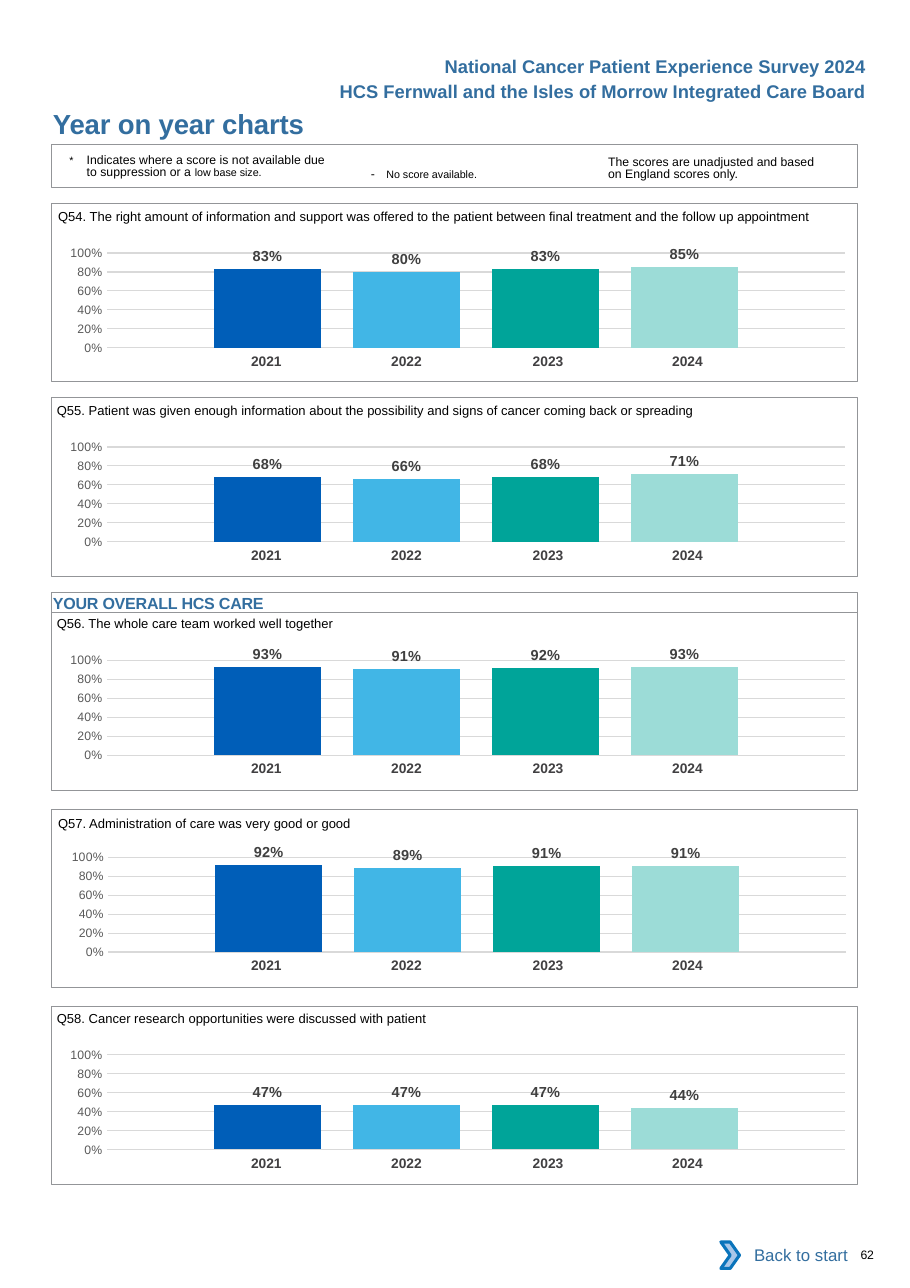
from lxml import etree
from pptx import Presentation
from pptx.chart.data import CategoryChartData
from pptx.dml.color import RGBColor
from pptx.enum import chart as ch, shapes, text
from pptx.oxml.ns import qn
from pptx.util import Cm, Pt

COLORS = {
    "blue": "336E9F", "black": "000000", "white": "FFFFFF", "frame": "939598",
    "grid": "D9D9D9", "axis": "595959", "label": "404040", "year": "414042",
    "arrow": "A8C7E9", "arrow_line": "0A74BB",
}
YEARS = {"2021": "005EB8", "2022": "41B6E6", "2023": "00A499", "2024": "9CDCD7"}
YEAR_COLUMNS = [(3.23, 0), (3.23, 0), (3.4, 0.1), (3.23, 0.3)]  # width, right margin
LEFT, WIDTH, PANEL_HEIGHT = 1.19, 18.59, 4.11
NO_STYLE = "{2D5ABB26-0587-4C30-8999-92F81FD0307C}"

# Panel top, question offset (x, y), chart offset (x, y), question, scores
PANELS = [
    (4.68, (0.15, 0.12), (-0.19, 0.68),
     "Q54. The right amount of information and support was offered to the patient "
     "between final treatment and the follow up appointment", (0.83, 0.8, 0.83, 0.85)),
    (9.17, (0.12, 0.1), (-0.19, 0.66),
     "Q55. Patient was given enough information about the possibility and signs of "
     "cancer coming back or spreading", (0.68, 0.66, 0.68, 0.71)),
    (14.12, (0.12, 0.08), (-0.19, 0.63),
     "Q56. The whole care team worked well together", (0.93, 0.91, 0.92, 0.93)),
    (18.66, (0.15, 0.14), (-0.16, 0.63),
     "Q57. Administration of care was very good or good", (0.92, 0.89, 0.91, 0.91)),
    (23.19, (0.12, 0.11), (-0.19, 0.65),
     "Q58. Cancer research opportunities were discussed with patient",
     (0.47, 0.47, 0.47, 0.44)),
]


def rgb(name):
    return RGBColor.from_string(COLORS.get(name, name))


def set_font(font, size, color, bold=False):
    font.name, font.size, font.bold = "Arial", Pt(size), bold
    font.color.rgb = rgb(color)


def write(sp, runs, size, color="black", bold=False, align="LEFT", spc=0,
          hanging=0, line=None):
    """Fill a shape with one paragraph; runs are (text, size) pairs or a string."""
    tf = sp.text_frame
    tf.word_wrap = True
    tf.margin_left = tf.margin_right = tf.margin_top = tf.margin_bottom = 0
    p = tf.paragraphs[0]
    p.alignment = getattr(text.PP_ALIGN, align)
    set_font(p.font, size, color, bold)
    if line:
        p.line_spacing = Pt(line)
    if hanging:
        pPr = p._p.get_or_add_pPr()
        pPr.set("marL", str(Cm(hanging)))
        pPr.set("indent", str(-Cm(hanging)))
    for words, run_size in [(runs, None)] if isinstance(runs, str) else runs:
        r = p.add_run()
        r.text = words
        if run_size:
            r.font.size = Pt(run_size)
        if spc:
            r.font._element.set("spc", str(spc))


def add_text(s, x, y, w, h, runs, size, **style):
    sp = s.shapes.add_textbox(Cm(x), Cm(y), Cm(w), Cm(h))
    write(sp, runs, size, **style)


def add_box(s, x, y, w, h, kind="RECTANGLE", fill=None, line=None, weight=0.5):
    sp = s.shapes.add_shape(getattr(shapes.MSO_SHAPE, kind), Cm(x), Cm(y), Cm(w), Cm(h))
    sp.shadow.inherit = False
    if fill:
        sp.fill.solid()
        sp.fill.fore_color.rgb = rgb(fill)
    else:
        sp.fill.background()
    if line:
        sp.line.color.rgb = rgb(line)
        sp.line.width = Pt(weight)
    else:
        sp.line.fill.background()
    return sp


def add_score_chart(s, x, y, w, h, scores):
    data = CategoryChartData(number_format="0%")
    data.categories = ["1"]
    for i, score in enumerate(scores, 1):
        data.add_series(f"Series {i}", [score])
    chart = s.shapes.add_chart(ch.XL_CHART_TYPE.COLUMN_CLUSTERED,
                               Cm(x), Cm(y), Cm(w), Cm(h), data).chart
    chart.has_legend = chart.has_title = False
    chart.font.name, chart.font.size = "Calibri", Pt(10)
    chart.category_axis.visible = False

    axis = chart.value_axis
    axis.minimum_scale, axis.maximum_scale, axis.major_unit = 0, 1, 0.2
    axis.major_tick_mark = ch.XL_TICK_MARK.NONE
    axis.format.line.fill.background()
    axis.major_gridlines.format.line.color.rgb = rgb("grid")
    axis.major_gridlines.format.line.width = Pt(0.75)
    axis.tick_labels.number_format = "0%"
    axis.tick_labels.number_format_is_linked = False
    set_font(axis.tick_labels.font, 8, "axis")

    plot = chart.plots[0]
    plot.gap_width, plot.overlap, plot.vary_by_categories = 200, -30, False
    for series, color in zip(plot.series, YEARS.values()):
        series.format.fill.solid()
        series.format.fill.fore_color.rgb = rgb(color)
        labels = series.data_labels
        labels.show_value = True
        labels.position = ch.XL_LABEL_POSITION.OUTSIDE_END
        labels.number_format, labels.number_format_is_linked = "0%", False
        set_font(labels.font, 9.5, "label", True)

    # Fixed inner plot area
    area = chart._chartSpace.chart.plotArea
    for old in area.findall(qn("c:layout")):
        area.remove(old)
    layout = etree.Element(qn("c:layout"))
    manual = etree.SubElement(layout, qn("c:manualLayout"))
    for tag, val in [("layoutTarget", "inner"), ("xMode", "edge"), ("yMode", "edge"),
                     ("x", 0.079), ("y", 0.145), ("w", 0.915), ("h", 0.666)]:
        etree.SubElement(manual, qn(f"c:{tag}")).set("val", str(val))
    area.insert(0, layout)


def add_year_table(s, x, y):
    total = sum(w for w, _ in YEAR_COLUMNS)
    table = s.shapes.add_table(1, len(YEARS), Cm(x), Cm(y), Cm(total), Cm(0.69)).table
    table.first_row = table.horz_banding = False
    table._tbl.tblPr.find(qn("a:tableStyleId")).text = NO_STYLE
    for i, (year, (w, right)) in enumerate(zip(YEARS, YEAR_COLUMNS)):
        table.columns[i].width = Cm(w)
        cell = table.cell(0, i)
        cell.fill.background()
        cell.margin_left, cell.margin_right = Cm(0.25), Cm(right)
        cell.margin_top = cell.margin_bottom = Cm(0.13)
        p = cell.text_frame.paragraphs[0]
        p.text, p.alignment = year, text.PP_ALIGN.CENTER
        set_font(p.font, 9, "year", True)


def add_panel(s, x, y, w, h, question_at, chart_at, question, scores):
    add_box(s, x, y, w, h, line="frame")
    add_score_chart(s, x + chart_at[0], y + chart_at[1], w, 3.28, scores)
    add_year_table(s, x + 3.21, y + chart_at[1] + 2.67)
    add_text(s, x + question_at[0], y + question_at[1], w - 0.25, 0.4, question, 8.5)


def add_header(s, x, y, w):
    for i, heading in enumerate(["National Cancer Patient Experience Survey 2024",
                                 "HCS Fernwall and the Isles of Morrow Integrated Care Board"]):
        add_text(s, x + 6, y + 0.57 * i, w - 5.81, 0.5, heading, 12,
                 color="blue", bold=True, align="RIGHT")
    add_text(s, x + 0.03, y + 1.18, 11.43, 0.76, "Year on year charts", 18,
             color="blue", bold=True, spc=-10)


def add_key(s, x, y, w, h):
    add_box(s, x, y, w, h, line="frame", weight=0.75)
    add_text(s, x + 0.41, y + 0.23, 6, 0.6,
             [("*\t", 7), ("Indicates where a score is not available due to suppression or a ", 8),
              ("low base size.", 7)], 8, hanging=0.4, line=8.1)
    add_text(s, x + 7.36, y + 0.51, 4, 0.32,
             [("-\t", 8), ("No score available.", 7)], 8, hanging=0.36)
    add_text(s, x + 12.83, y + 0.28, 4.95, 0.6,
             "The scores are unadjusted and based on England scores only.", 8, line=8.1)


def add_section(s, x, y, w, h):
    sp = add_box(s, x, y, w, h, line="frame")
    write(sp, "YOUR OVERALL HCS CARE", 10.5, color="blue", bold=True, spc=-10)
    sp.text_frame.margin_left = Cm(0.03)
    sp.text_frame.margin_top = Cm(0.03)


def add_footer(s, x, y, w, h):
    sp = add_box(s, x + 0.18, y, w, h, fill="white")
    write(sp, "Back to start", 11, color="blue", align="RIGHT")
    sp.text_frame.margin_right = Cm(0.25)
    sp.text_frame.vertical_anchor = text.MSO_ANCHOR.MIDDLE
    add_box(s, x, y + 0.23, 0.43, 0.61, "CHEVRON", "arrow", "arrow_line", 2)
    add_text(s, x + 3.22, y + 0.36, 0.8, 0.32, "62", 8, spc=-20)


def main():
    prs = Presentation()
    prs.slide_width, prs.slide_height = Cm(20.98), Cm(29.69)
    s = prs.slides.add_slide(prs.slide_layouts[6])
    add_header(s, LEFT, 1.28, WIDTH)
    add_key(s, LEFT, 3.33, WIDTH, 0.99)
    add_section(s, LEFT, 13.66, WIDTH, 0.46)
    for top, *content in PANELS:
        add_panel(s, LEFT, top, WIDTH, PANEL_HEIGHT, *content)
    add_footer(s, 16.62, 28.4, 3, 1.07)
    prs.save("out.pptx")


if __name__ == "__main__":
    main()
